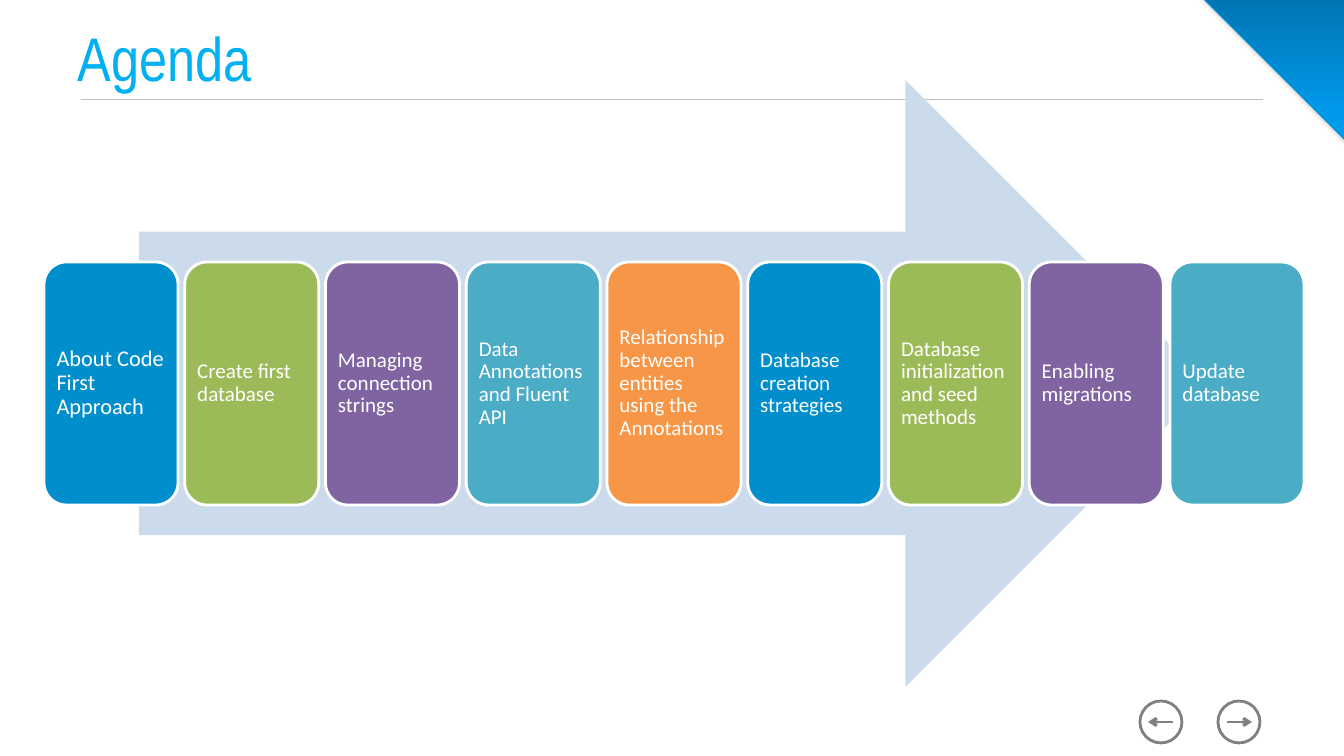
from lxml import etree
from pptx import Presentation
from pptx.dml.color import RGBColor
from pptx.enum.shapes import MSO_CONNECTOR, MSO_SHAPE
from pptx.enum.text import MSO_ANCHOR, PP_ALIGN
from pptx.oxml.ns import qn
from pptx.util import Emu, Pt

STRAIGHT = MSO_CONNECTOR.STRAIGHT
OVAL = MSO_SHAPE.OVAL
TRIANGLE = MSO_SHAPE.RIGHT_TRIANGLE
ARROW = MSO_SHAPE.RIGHT_ARROW
CARD = MSO_SHAPE.ROUNDED_RECTANGLE
MIDDLE = MSO_ANCHOR.MIDDLE
LEFT = PP_ALIGN.LEFT

WIDTH, HEIGHT = 1344, 756
SCALE = 914400 / 100.8
COLORS = {
    "white": "FFFFFF", "rule": "BFBFBF", "gray": "808080", "title": "00B0F0",
    "arrow": "CCDBEC", "blue": "008ECC", "green": "9BBB59", "purple": "8064A2",
    "teal": "4BACC6", "orange": "F79646", "edge": "0091D2",
    "bright": "009CF0", "mid": "0099EA", "deep": "0074B2",
}
STEPS = [
    ("About Code First Approach", "blue"),
    ("Create first database", "green"),
    ("Managing connection strings", "purple"),
    ("Data Annotations and Fluent API", "teal"),
    ("Relationship between entities using the Annotations", "orange"),
    ("Database creation strategies", "blue"),
    ("Database initialization and seed methods", "green"),
    ("Enabling migrations", "purple"),
    ("Update database", "teal"),
]
FIRST_X, LAST_X = 44, 1170


def px(n):
    return Emu(round(n * SCALE))


def rgb(name):
    return RGBColor.from_string(COLORS[name])


class Deck:
    """Draws styled elements on the current slide, with lengths in px."""

    def __init__(self):
        self.prs = Presentation()
        self.prs.slide_width, self.prs.slide_height = px(WIDTH), px(HEIGHT)
        self.s = self.prs.slides.add_slide(self.prs.slide_layouts[6])

    def shape(self, kind, x, y, w, h, fill=None, line=None, weight=2):
        sp = self.s.shapes.add_shape(kind, px(x), px(y), px(w), px(h))
        sp.shadow.inherit = False
        if fill:
            sp.fill.solid()
            sp.fill.fore_color.rgb = rgb(fill)
        else:
            sp.fill.background()
        if line:
            sp.line.color.rgb = rgb(line)
            sp.line.width = Pt(weight)
        else:
            sp.line.fill.background()
        return sp

    def line(self, x1, y1, x2, y2, color, weight, head=False):
        c = self.s.shapes.add_connector(STRAIGHT, px(x1), px(y1), px(x2), px(y2))
        c.line.color.rgb = rgb(color)
        c.line.width = Pt(weight)
        if head:
            ln = c._element.spPr.find(qn("a:ln"))
            etree.SubElement(ln, qn("a:tailEnd"), type="arrow")
        etree.SubElement(c._element.spPr, qn("a:effectLst"))

    def text(self, sp, words, font, size, color, inset_x, inset_y, spacing=1.0):
        tf = sp.text_frame
        tf.word_wrap = True
        tf.vertical_anchor = MIDDLE
        tf.margin_left = tf.margin_right = px(inset_x)
        tf.margin_top = tf.margin_bottom = px(inset_y)
        p = tf.paragraphs[0]
        p.alignment = LEFT
        p.line_spacing = spacing
        r = p.add_run()
        r.text = words
        r.font.name, r.font.size = font, Pt(size)
        r.font.color.rgb = rgb(color)

    def title(self, words, x, y, w, h):
        sp = self.s.shapes.add_textbox(px(x), px(y), px(w), px(h))
        self.text(sp, words, "Arial Narrow", 44, "title", 10, 5)

    def card(self, words, x, fill, size):
        sp = self.shape(CARD, x, 262, 134, 243, fill, "white")
        self.text(sp, words, "Calibri", size, "white", 6, 6, 0.9)

    def nav_button(self, x, start, end):
        self.shape(OVAL, x, 701, 42, 42, line="gray")
        self.line(start, 722, end, 722, "gray", 2, head=True)

    def corner(self, x, y, size):
        sp = self.shape(TRIANGLE, x, y, size, size, line="edge", weight=0.75)
        sp.rotation = 180
        sp.fill.gradient()
        sp.fill.gradient_angle = 270
        spPr = sp._element.spPr
        stops = spPr.find(qn("a:gradFill")).find(qn("a:gsLst"))
        for gs in list(stops):
            stops.remove(gs)
        for pos, name in ((0, "bright"), (20, "mid"), (100, "deep")):
            gs = etree.SubElement(stops, qn("a:gs"), pos=str(pos * 1000))
            etree.SubElement(gs, qn("a:srgbClr"), val=COLORS[name])
        shadow = etree.SubElement(
            spPr.find(qn("a:effectLst")), qn("a:outerShdw"), blurRad=str(Pt(3.1)),
            dist=str(Pt(1.8)), dir="5400000", rotWithShape="0")
        clr = etree.SubElement(shadow, qn("a:srgbClr"), val=COLORS["gray"])
        etree.SubElement(clr, qn("a:alpha"), val="35000")


def main():
    deck = Deck()
    deck.line(81, 100, 1263, 100, "rule", 0.75)
    deck.line(81, 101, 1263, 101, "white", 0.75)
    deck.nav_button(1140, 1173, 1148)
    deck.nav_button(1218, 1227, 1252)
    deck.corner(1202, -3, 143)
    deck.title("Agenda", 68, 17, 1210, 79)
    deck.shape(ARROW, 139, 80, 1070, 607, "arrow")
    pitch = (LAST_X - FIRST_X) / (len(STEPS) - 1)
    for i, (words, fill) in enumerate(STEPS):
        deck.card(words, FIRST_X + i * pitch, fill, 15 if i else 16)
    deck.prs.save("out.pptx")


if __name__ == "__main__":
    main()
